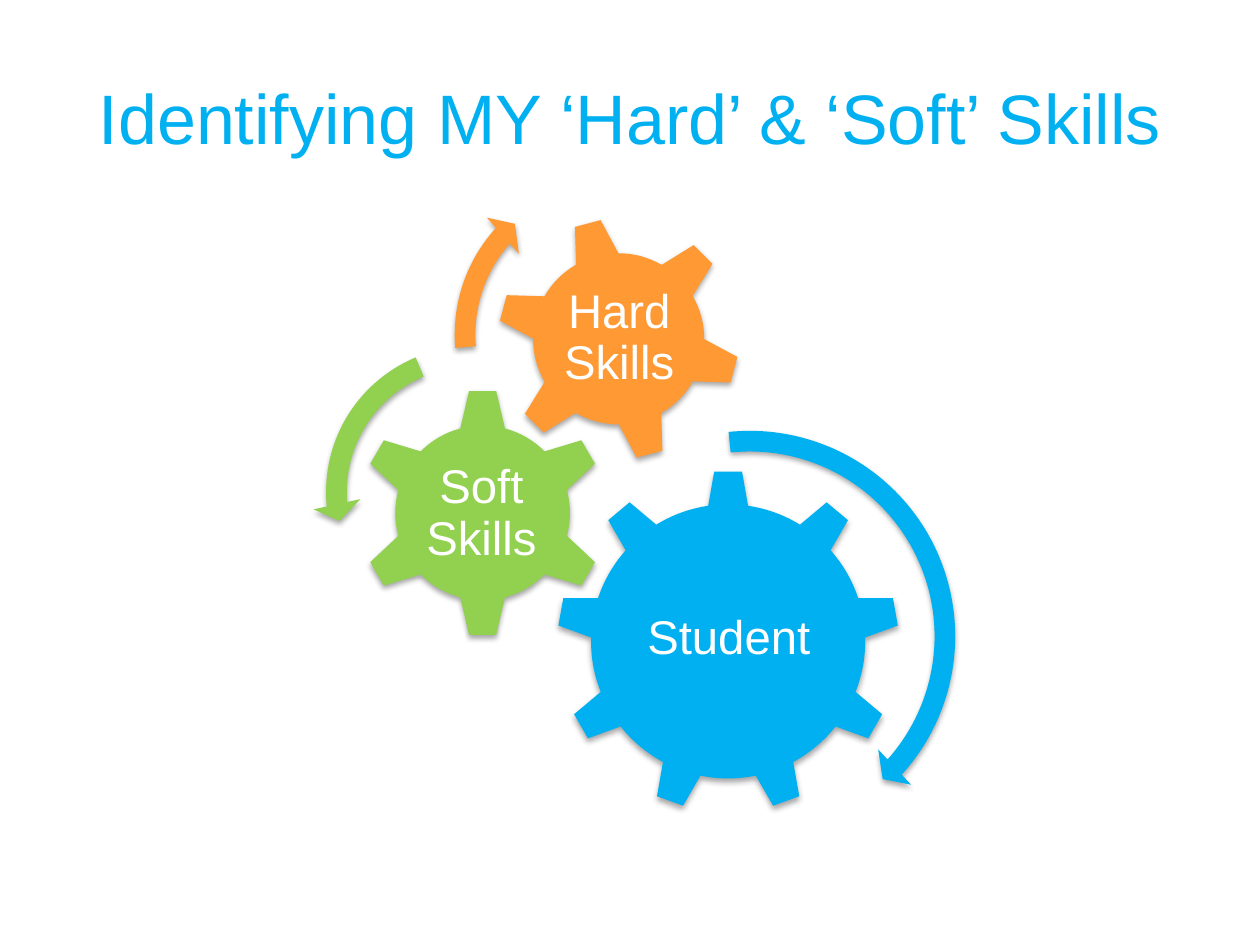
"""Build a slide of three meshing gears for hard skills, soft skills and the student."""
from lxml import etree
from pptx import Presentation
from pptx import util as u
from pptx.dml.color import RGBColor
from pptx.enum import shapes, text
from pptx.oxml import ns

Pt = u.Pt
kind = shapes.MSO_SHAPE
BLUE, GREEN, ORANGE = "00B0F0", "92D050", "FF9933"


def style(frame, size, color):
    frame.word_wrap = True
    frame.vertical_anchor = text.MSO_ANCHOR.MIDDLE
    para = frame.paragraphs[0]
    para.alignment = text.PP_ALIGN.CENTER
    font = para.runs[0].font
    font.name, font.size = "Arial", Pt(size)
    font.color.rgb = RGBColor.from_string(color)


def draw(group, form, left, top, size, color):
    shape = group.shapes.add_shape(form, Pt(left), Pt(top), Pt(size), Pt(size))
    shape.fill.solid()
    shape.fill.fore_color.rgb = RGBColor.from_string(color)
    shape.line.fill.background()
    shape.shadow.inherit = False
    effects = shape._element.spPr.find(ns.qn("a:effectLst"))
    shadow = etree.SubElement(effects, ns.qn("a:outerShdw"), blurRad=str(Pt(3.15)),
                              dist=str(Pt(1.81)), dir="5400000", rotWithShape="0")
    black = etree.SubElement(shadow, ns.qn("a:srgbClr"), val="000000")
    etree.SubElement(black, ns.qn("a:alpha"), val="35000")
    return shape


deck = Presentation()
deck.slide_width, deck.slide_height = Pt(720), Pt(540)
slide = deck.slides.add_slide(deck.slide_layouts[5])

title = slide.shapes.title
title.left, title.top, title.width, title.height = Pt(36), Pt(21.6), Pt(648), Pt(90)
title.text_frame.text = "Identifying MY ‘Hard’ & ‘Soft’ Skills"
style(title.text_frame, 40, BLUE)

group = slide.shapes.add_group_shape()

gears = [
    ("Student", kind.GEAR_9, (318.2, 268.6, 195.8), 0, BLUE, (357.8, 314.6, 117.4, 100.8)),
    ("Soft Skills", kind.GEAR_6, (204.5, 221.8, 142.6), 0, GREEN, (239.8, 258.5, 70.6, 70.6)),
    ("Hard Skills", kind.GEAR_6, (283.7, 123.8, 139.7), 345, ORANGE, (314.6, 154.1, 78.5, 78.5)),
]
for name, form, place, turn, color, area in gears:
    gear = draw(group, form, *place, color)
    gear.rotation = turn
    label = group.shapes.add_textbox(*[Pt(v) for v in area])
    frame = label.text_frame
    frame.text = name
    frame.margin_left = frame.margin_right = Pt(2.7)
    frame.margin_top = frame.margin_bottom = Pt(2.7)
    style(frame, 27, "FFFFFF")
    frame.paragraphs[0].line_spacing = 0.9

arrows = [
    (kind.CIRCULAR_ARROW, (303.1, 238.3, 250.6), BLUE, 4.7, (4.98, 42.06, 264.09), 5.5),
    (kind.LEFT_CIRCULAR_ARROW, (178.6, 190.1, 182.2), GREEN, 6.5, (7.17, 174.82, 247.3), 7.5),
    (kind.CIRCULAR_ARROW, (252, 92.9, 196.6), ORANGE, 6, (6.57, 221.9, 175.14), 7),
]
for form, place, color, width, angles, head in arrows:
    arrow = draw(group, form, *place, color)
    values = [width / 100, *[angle * 0.6 for angle in angles], head / 100]
    for index, value in enumerate(values):
        arrow.adjustments[index] = value

deck.save("out.pptx")
